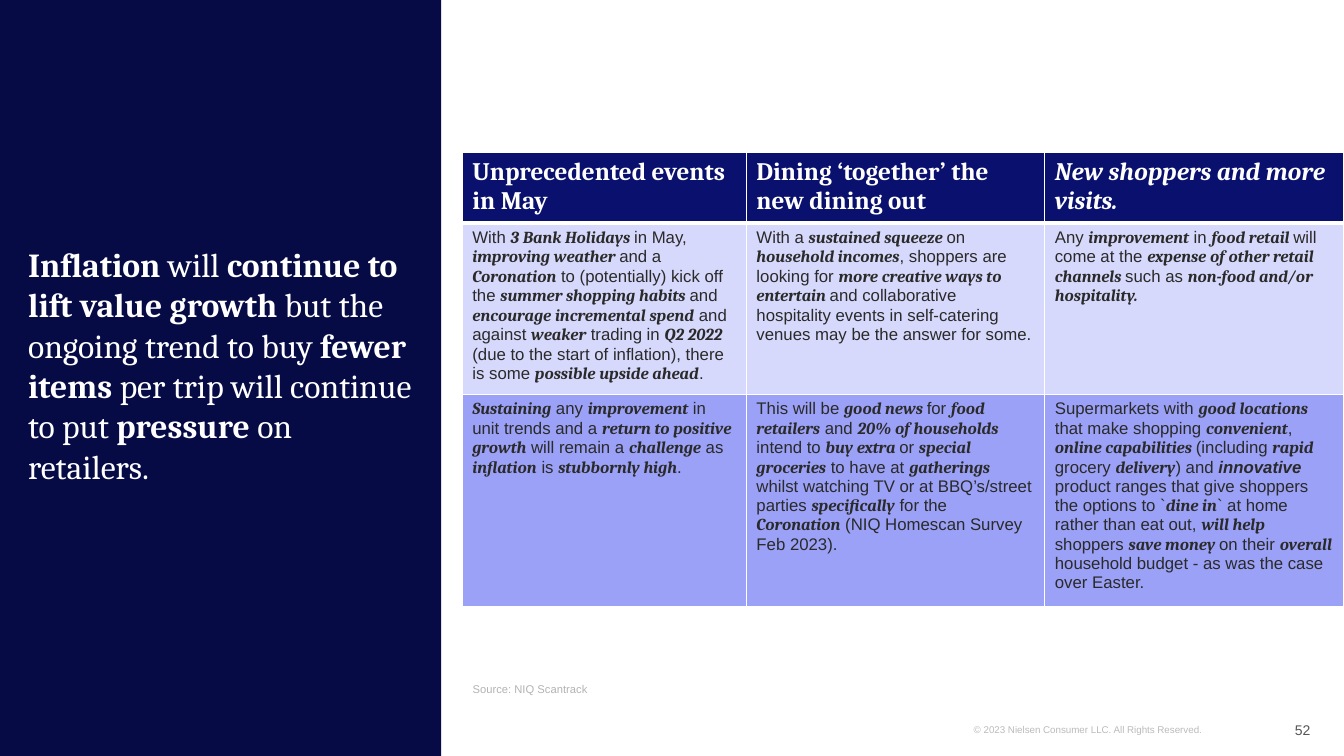
from lxml import etree
from pptx import Presentation
from pptx import util as u
from pptx.dml.color import RGBColor
from pptx.enum import shapes, text
from pptx.oxml.ns import qn

COLORS = {
    "panel": "060A45", "header": "09106D", "events": "D7D9FC", "outlook": "9BA1F6",
    "white": "FFFFFF", "body": "2A2A2A", "number": "555555",
    "copyright": "BBBBBB", "source": "B3B3B3",
}
TITLE = {"name": "Cambria", "size": u.Pt(24), "bold": False}
TITLE_STRONG = {**TITLE, "bold": True}
HEADER = {"name": "Cambria", "size": u.Pt(18), "bold": True, "italic": False}
HEADER_STRONG = {**HEADER, "italic": True}
BODY = {"name": "Arial", "size": u.Pt(12), "bold": False, "italic": False}
BODY_STRONG = {"name": "Cambria", "size": u.Pt(12), "bold": True, "italic": True}
ARIAL_EMPHASIS = "innovative "


def write(paragraph, marked_text, color, plain, strong):
    for index, part in enumerate(marked_text.split("|")):
        if not part:
            continue
        run = paragraph.add_run()
        run.text = part
        run.font.color.rgb = RGBColor.from_string(COLORS[color])
        for name, value in (strong if index % 2 else plain).items():
            setattr(run.font, name, value)
        if part == ARIAL_EMPHASIS:
            run.font.name = "Arial"


def add_border(cell, side, position, points):
    line = etree.Element(qn(f"a:{side}"), w=str(u.Pt(points)))
    fill = etree.SubElement(line, qn("a:solidFill"))
    etree.SubElement(fill, qn("a:srgbClr"), val=COLORS["white"])
    cell._tc.get_or_add_tcPr().insert(position, line)


presentation = Presentation()
presentation.slide_width = u.Cm(33.87)
presentation.slide_height = u.Cm(19.05)
slide = presentation.slides.add_slide(presentation.slide_layouts[6])

panel = slide.shapes.add_shape(shapes.MSO_SHAPE.RECTANGLE, 0, 0, u.Cm(11.12), u.Cm(19.05))
panel.shadow.inherit = False
panel.fill.solid()
panel.fill.fore_color.rgb = RGBColor.from_string(COLORS["panel"])
panel.line.fill.background()

TOP, MIDDLE, BOTTOM = text.MSO_ANCHOR.TOP, text.MSO_ANCHOR.MIDDLE, text.MSO_ANCHOR.BOTTOM
LEFT, RIGHT = text.PP_ALIGN.LEFT, text.PP_ALIGN.RIGHT
text_boxes = [
    ((24.54, 18.11, 7.21, 0.56), TOP, LEFT, "copyright", {"name": "Arial", "size": u.Pt(7)},
     "© 2023 Nielsen Consumer LLC. All Rights Reserved."),
    ((30.5, 17.88, 2.52, 1.02), MIDDLE, RIGHT, "number", {"name": "Arial", "size": u.Pt(10)}, "52"),
    ((0.71, 5.74, 9.73, 6.63), BOTTOM, LEFT, "white", TITLE,
     "|Inflation| will |continue to lift value growth |but the ongoing trend to buy "
     "|fewer items |per trip will continue to put |pressure| on retailers."),
    ((11.91, 16.64, 21.11, 1.02), BOTTOM, LEFT, "source", {"name": "Arial", "size": u.Pt(8)},
     "Source: NIQ Scantrack"),
]
for box, anchor, alignment, color, plain, wording in text_boxes:
    frame = slide.shapes.add_textbox(*map(u.Cm, box)).text_frame
    settings = {"word_wrap": True, "vertical_anchor": anchor, "margin_left": 0, "margin_right": 0}
    for name, value in settings.items():
        setattr(frame, name, value)
    frame.paragraphs[0].alignment = alignment
    write(frame.paragraphs[0], wording, color, plain, TITLE_STRONG)

rows = [
    ("header", 1.71, "white", HEADER, HEADER_STRONG, [
        "Unprecedented events in May",
        "Dining ‘together’ the new dining out",
        "|New shoppers and more visits.",
    ]),
    ("events", 4.16, "body", BODY, BODY_STRONG, [
        "With |3 Bank Holidays |in May, |improving weather |and a |Coronation| to (potentially) "
        "kick off the |summer shopping habits |and |encourage incremental spend| and against "
        "|weaker| trading in |Q2 2022 |(due to the start of inflation), there is some "
        "|possible upside ahead|.",
        "With a |sustained squeeze |on |household incomes|, shoppers are looking for "
        "|more creative ways to entertain |and collaborative hospitality events in "
        "self-catering venues may be the answer for some.",
        "Any |improvement| in |food retail |will come at the |expense of other retail channels "
        "|such as |non-food and/or hospitality.",
    ]),
    ("outlook", 5.1, "body", BODY, BODY_STRONG, [
        "|Sustaining| any |improvement| in unit trends and a |return to positive growth| will "
        "remain a |challenge| as |inflation| is |stubbornly high|.",
        "This will be |good news |for |food retailers| and |20% of households |intend to "
        "|buy extra |or |special groceries| to have at |gatherings| whilst watching TV or at "
        "BBQ’s/street parties |specifically| for the |Coronation| (NIQ Homescan Survey Feb 2023).",
        "Supermarkets with |good locations |that make shopping |convenient|, "
        "|online capabilities |(including |rapid| grocery |delivery|) and |innovative |product "
        "ranges that give shoppers the options to `|dine in|` at home rather than eat out, "
        "|will help |shoppers |save money |on their |overall| household budget - as was the "
        "case over Easter.",
    ]),
]
column_widths = [7.16, 7.52, 7.52]
table = slide.shapes.add_table(
    len(rows), len(column_widths), u.Cm(11.65), u.Cm(3.84),
    u.Cm(sum(column_widths)), u.Cm(sum(row[1] for row in rows)),
).table
for column, width in zip(table.columns, column_widths):
    column.width = u.Cm(width)
for row_index, (fill, height, color, plain, strong, wordings) in enumerate(rows):
    table.rows[row_index].height = u.Cm(height)
    for cell, wording in zip(table.rows[row_index].cells, wordings):
        cell.fill.solid()
        cell.fill.fore_color.rgb = RGBColor.from_string(COLORS[fill])
        borders = {"lnL": 1, "lnR": 1, "lnT": 3 if row_index == 1 else 1,
                   "lnB": 3 if row_index == 0 else 1}
        for position, (side, points) in enumerate(borders.items()):
            add_border(cell, side, position, points)
        write(cell.text_frame.paragraphs[0], wording, color, plain, strong)

presentation.save("out.pptx")
